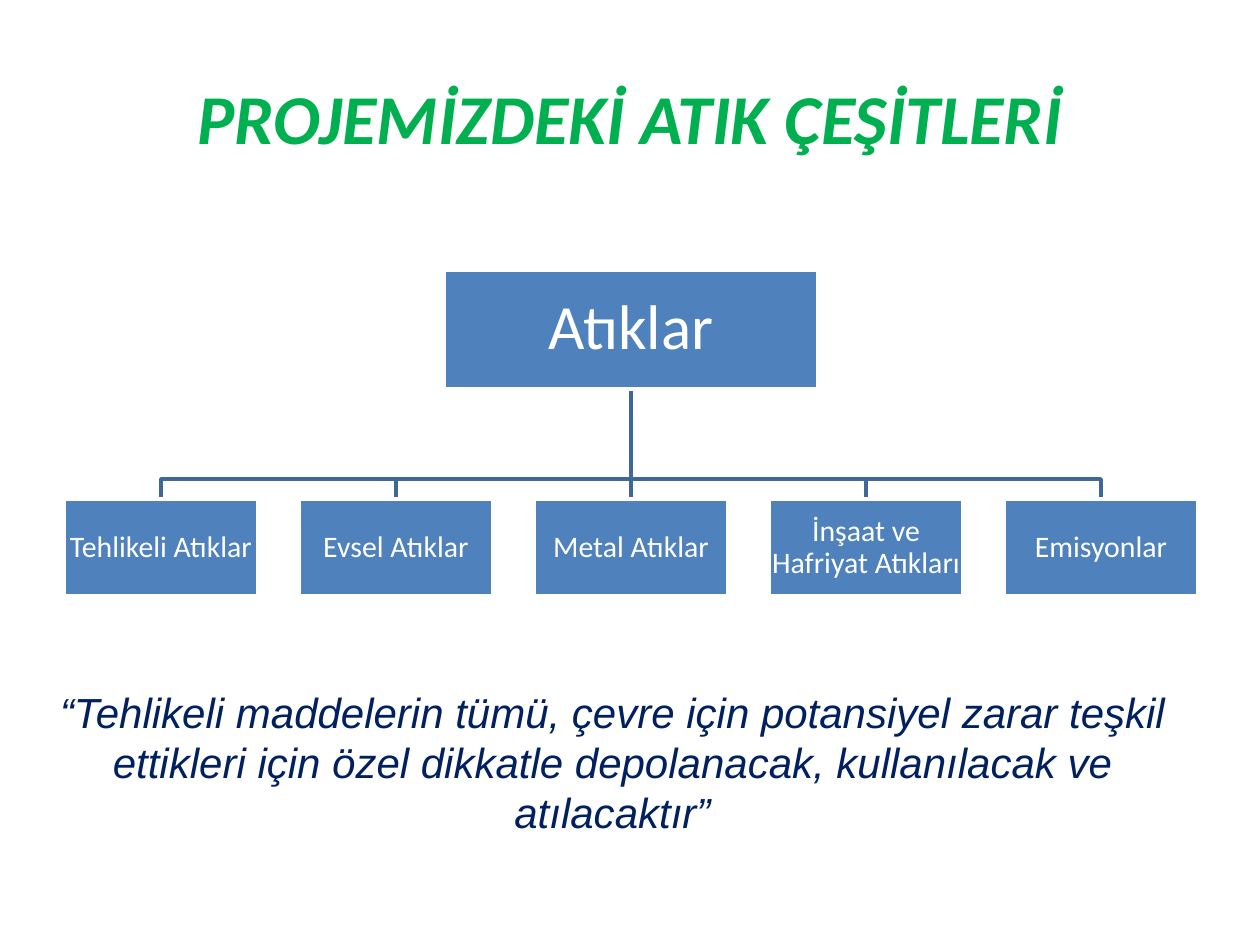
from pptx import Presentation
from pptx.dml.color import RGBColor
from pptx.enum.shapes import MSO_CONNECTOR, MSO_SHAPE
from pptx.enum.text import MSO_ANCHOR, PP_ALIGN
from pptx.oxml.ns import qn
from pptx.util import Emu, Pt
from lxml.etree import SubElement

SCALE = 914400 / 126
COLORS = {"title": "00B050", "box": "4F81BD", "link": "3F6797",
          "white": "FFFFFF", "quote": "002060"}
WASTES = ["Tehlikeli Atıklar", "Evsel Atıklar", "Metal Atıklar",
          "İnşaat ve Hafriyat Atıkları", "Emisyonlar"]
QUOTE = ("“Tehlikeli maddelerin tümü, çevre için potansiyel zarar teşkil "
         "ettikleri için özel dikkatle depolanacak, kullanılacak ve atılacaktır”")

# Chart grid in px
LEFT, STEP, WIDE, HIGH = 64, 235, 194, 97
ROOT_TOP, ROOT_WIDE, ROOT_HIGH = 270, 374, 119
BUS, ROW = 479, 499
MID = LEFT + 2 * STEP + WIDE // 2


def px(num):
    return Emu(round(num * SCALE))


def tint(name):
    return RGBColor.from_string(COLORS[name])


def set_text(shape, text, size, color, font="Calibri", bold=False, italic=False):
    frame = shape.text_frame
    frame.text = text
    frame.word_wrap = True
    para = frame.paragraphs[0]
    para.alignment = PP_ALIGN.CENTER
    face = para.runs[0].font
    face.name, face.size = font, Pt(size)
    face.bold, face.italic = bold, italic
    face.color.rgb = tint(color)
    return frame


def add_label(slide, box, text, size, color, anchor, **style):
    label = slide.shapes.add_textbox(*map(px, box))
    set_text(label, text, size, color, **style).vertical_anchor = anchor


def add_box(slide, box, text, size, inset):
    rect = slide.shapes.add_shape(MSO_SHAPE.RECTANGLE, *map(px, box))
    rect.shadow.inherit = False
    rect.fill.solid()
    rect.fill.fore_color.rgb = tint("box")
    rect.line.color.rgb = tint("white")
    rect.line.width = Pt(2)
    frame = set_text(rect, text, size, "white")
    frame.vertical_anchor = MSO_ANCHOR.MIDDLE
    frame.margin_left = frame.margin_right = px(inset)
    frame.margin_top = frame.margin_bottom = px(inset)
    frame.paragraphs[0].line_spacing = 0.9
    return rect


def style_link(slide, link):
    link.line.color.rgb = tint("link")
    link.line.width = Pt(2)
    # Links lie behind the boxes
    slide.shapes.element.insert(2, link.element)


def add_stem(slide, root, leaf):
    stem = slide.shapes.add_connector(MSO_CONNECTOR.STRAIGHT, 0, 0, 0, 0)
    stem.begin_connect(root, 2)
    stem.end_connect(leaf, 0)
    style_link(slide, stem)
    SubElement(stem.element.spPr, qn("a:effectLst"))


def add_branch(slide, mid):
    start = ROOT_TOP + ROOT_HIGH
    path = slide.shapes.build_freeform(MID, start, scale=SCALE)
    path.add_line_segments([(MID, BUS), (mid, BUS), (mid, ROW)], close=False)
    branch = path.convert_to_shape()
    branch.fill.background()
    branch.shadow.inherit = False
    style_link(slide, branch)


def add_tree(slide):
    root = add_box(slide, (MID - ROOT_WIDE // 2, ROOT_TOP, ROOT_WIDE, ROOT_HIGH),
                   "Atıklar", 36, 4)
    for col, waste in enumerate(WASTES):
        left = LEFT + col * STEP
        leaf = add_box(slide, (left, ROW, WIDE, HIGH), waste, 17, 1)
        mid = left + WIDE // 2
        if mid == MID:
            add_stem(slide, root, leaf)
        else:
            add_branch(slide, mid)


def main():
    deck = Presentation()
    deck.slide_width, deck.slide_height = px(1260), px(945)
    slide = deck.slides.add_slide(deck.slide_layouts[6])
    # Title
    add_label(slide, (63, 38, 1134, 157), "PROJEMİZDEKİ ATIK ÇEŞİTLERİ", 40,
              "title", MSO_ANCHOR.MIDDLE, bold=True, italic=True)
    # Waste types
    add_tree(slide)
    # Closing quote
    add_label(slide, (0, 680, 1225, 165), QUOTE, 24, "quote",
              MSO_ANCHOR.TOP, font="Arial", italic=True)
    deck.save("out.pptx")


if __name__ == "__main__":
    main()
